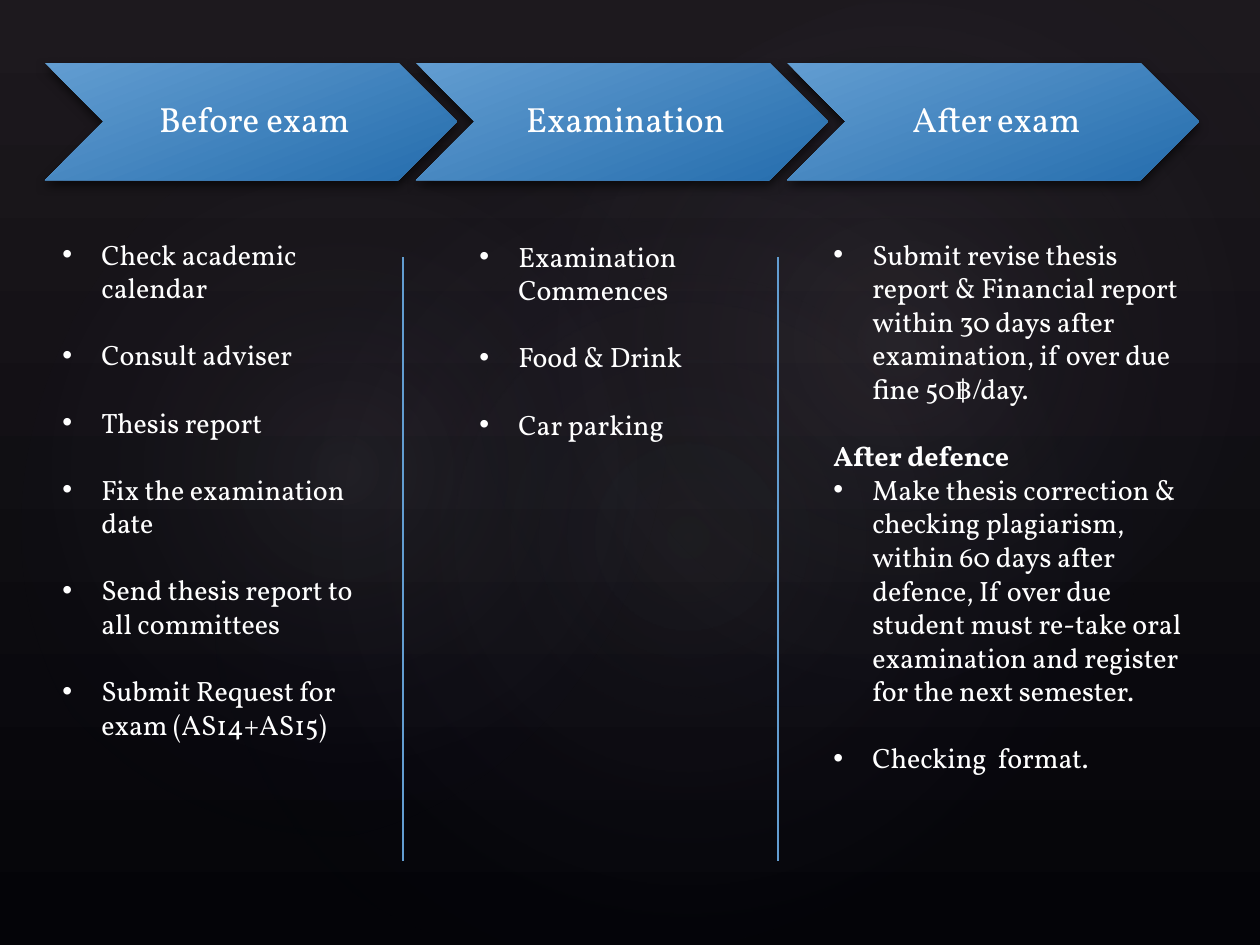
from dataclasses import dataclass

from lxml.etree import SubElement as Sub
from pptx import Presentation
from pptx.dml.color import RGBColor as Rgb
from pptx.enum.shapes import MSO_CONNECTOR as Conn, MSO_SHAPE as Form
from pptx.enum.text import MSO_ANCHOR as Anchor, PP_ALIGN as Align
from pptx.oxml.ns import qn
from pptx.util import Emu, Pt

WHITE = Rgb(0xFF, 0xFF, 0xFF)
SKY = Rgb(0x62, 0x9D, 0xD1)
BLUE = Rgb(0x25, 0x6D, 0xAD)
NAVY = Rgb(0x24, 0x28, 0x52)
MIST = Rgb(0xC4, 0xBC, 0xC6)
DUSK = Rgb(0x1D, 0x19, 0x1E)
NIGHT = Rgb(0x04, 0x04, 0x08)
FACE = "Vollkorn"
SCALE = 914400 / 126
WIDE, HIGH = 1260, 945
LEFT, TOP, STEP = 45, 63, 371
HANG = 39
GAP = Pt(19.2)


@dataclass
class Glow:
    box: tuple[int, int, int, int]
    turn: float
    alpha: int


@dataclass
class Stage:
    title: str
    space: int = 20


@dataclass
class Item:
    text: str
    gap: bool = True
    head: bool = False


@dataclass
class Column:
    box: tuple[int, int, int, int]
    items: list[Item]


GLOWS = [
    Glow((189, 144, 998, 786), 328.7, 7),
    Glow((-38, 161, 764, 617), 294.3, 8),
    Glow((451, 16, 893, 655), 328.7, 8),
]
STAGES = [Stage("Before exam"), Stage("Examination"), Stage("After exam", 14)]
RULES = [403, 778]
COLUMNS = [
    Column((50, 231, 341, 590), [
        Item("Check academic calendar"),
        Item("Consult adviser"),
        Item("Thesis report"),
        Item("Fix the examination date"),
        Item("Send thesis report to all committees"),
        Item("Submit Request for exam (AS14+AS15)"),
    ]),
    Column((467, 233, 246, 285), [
        Item("Examination Commences"),
        Item("Food & Drink"),
        Item("Car parking"),
    ]),
    Column((821, 231, 375, 624), [
        Item("Submit revise thesis report & Financial report within 30 days "
             "after examination, if over due fine 50฿/day."),
        Item("After defence", gap=False, head=True),
        Item("Make thesis correction & checking plagiarism, within 60 days "
             "after defence, If over due student must re-take oral "
             "examination and register for the next semester."),
        Item("Checking  format."),
    ]),
]


def px(num: float) -> Emu:
    return Emu(round(num * SCALE))


def put(obj, vals: dict) -> None:
    for name, val in vals.items():
        setattr(obj, name, val)


def blend(fill, first: Rgb, last: Rgb, angle: int) -> None:
    fill.gradient()
    fill.gradient_angle = angle
    for stop, tint, pos in zip(fill.gradient_stops, (first, last), (0, 1)):
        stop.color.rgb = tint
        stop.position = pos


def write(para, text: str, size: int, bold: bool = False) -> None:
    run = para.add_run()
    run.text = text
    put(run.font, {"name": FACE, "size": Pt(size), "bold": bold})
    run.font.color.rgb = WHITE


def add_glow(slide, glow: Glow) -> None:
    oval = slide.shapes.add_shape(Form.OVAL, *map(px, glow.box))
    oval.rotation = glow.turn
    oval.shadow.inherit = False
    oval.line.fill.background()
    blend(oval.fill, MIST, NAVY, 0)
    oval.fill.gradient_stops[1].position = 0.58
    grad = oval._element.spPr.find(qn("a:gradFill"))
    for tint, alpha in zip(grad.iter(qn("a:srgbClr")), (glow.alpha, 0)):
        Sub(tint, qn("a:alpha"), val=str(alpha * 1000))
    grad.remove(grad.find(qn("a:lin")))
    path = Sub(grad, qn("a:path"), path="circle")
    Sub(path, qn("a:fillToRect"), dict.fromkeys("ltrb", "50000"))


def add_stage(slide, num: int, stage: Stage) -> None:
    box = LEFT + num * STEP, TOP, 412, 117
    arrow = slide.shapes.add_shape(Form.CHEVRON, *map(px, box))
    arrow.line.fill.background()
    blend(arrow.fill, SKY, BLUE, 291)
    arrow.shadow.inherit = False
    glow = arrow._element.spPr.find(qn("a:effectLst"))
    shade = Sub(glow, qn("a:outerShdw"), blurRad=str(Pt(6)),
                dist=str(Pt(3)), dir="5400000", rotWithShape="0")
    tint = Sub(shade, qn("a:srgbClr"), val="000000")
    Sub(tint, qn("a:alpha"), val="60000")
    frame = arrow.text_frame
    put(frame, {"word_wrap": True, "vertical_anchor": Anchor.MIDDLE,
                "margin_left": px(11), "margin_right": px(4),
                "margin_top": px(4), "margin_bottom": px(4)})
    para = frame.paragraphs[0]
    put(para, {"alignment": Align.CENTER, "line_spacing": 0.9})
    first, *rest = stage.title.split()
    write(para, first, 20)
    for word in rest:
        write(para, " ", stage.space)
        write(para, word, 20)


def add_rule(slide, left: int) -> None:
    ends = map(px, (left, 257, left, 861))
    rule = slide.shapes.add_connector(Conn.STRAIGHT, *ends)
    rule.line.color.rgb = SKY
    rule.line.width = Pt(1)
    Sub(rule._element.spPr, qn("a:effectLst"))


def add_column(slide, col: Column) -> None:
    frame = slide.shapes.add_textbox(*map(px, col.box)).text_frame
    frame.word_wrap = True
    for num, item in enumerate(col.items):
        para = frame.add_paragraph() if num else frame.paragraphs[0]
        last = num == len(col.items) - 1
        para.space_after = GAP if item.gap and not last else Pt(0)
        write(para, item.text, 16, item.head)
        if not item.head:
            prop = para._p.get_or_add_pPr()
            prop.set("marL", str(px(HANG)))
            prop.set("indent", str(px(-HANG)))
            Sub(prop, qn("a:buFont"), typeface="Arial")
            Sub(prop, qn("a:buChar"), char="•")


def main() -> None:
    deck = Presentation()
    put(deck, {"slide_width": px(WIDE), "slide_height": px(HIGH)})
    slide = deck.slides.add_slide(deck.slide_layouts[6])
    blend(slide.background.fill, DUSK, NIGHT, 270)
    for glow in GLOWS:
        add_glow(slide, glow)
    for num, stage in enumerate(STAGES):
        add_stage(slide, num, stage)
    for left in RULES:
        add_rule(slide, left)
    for col in COLUMNS:
        add_column(slide, col)
    deck.save("out.pptx")


if __name__ == "__main__":
    main()
